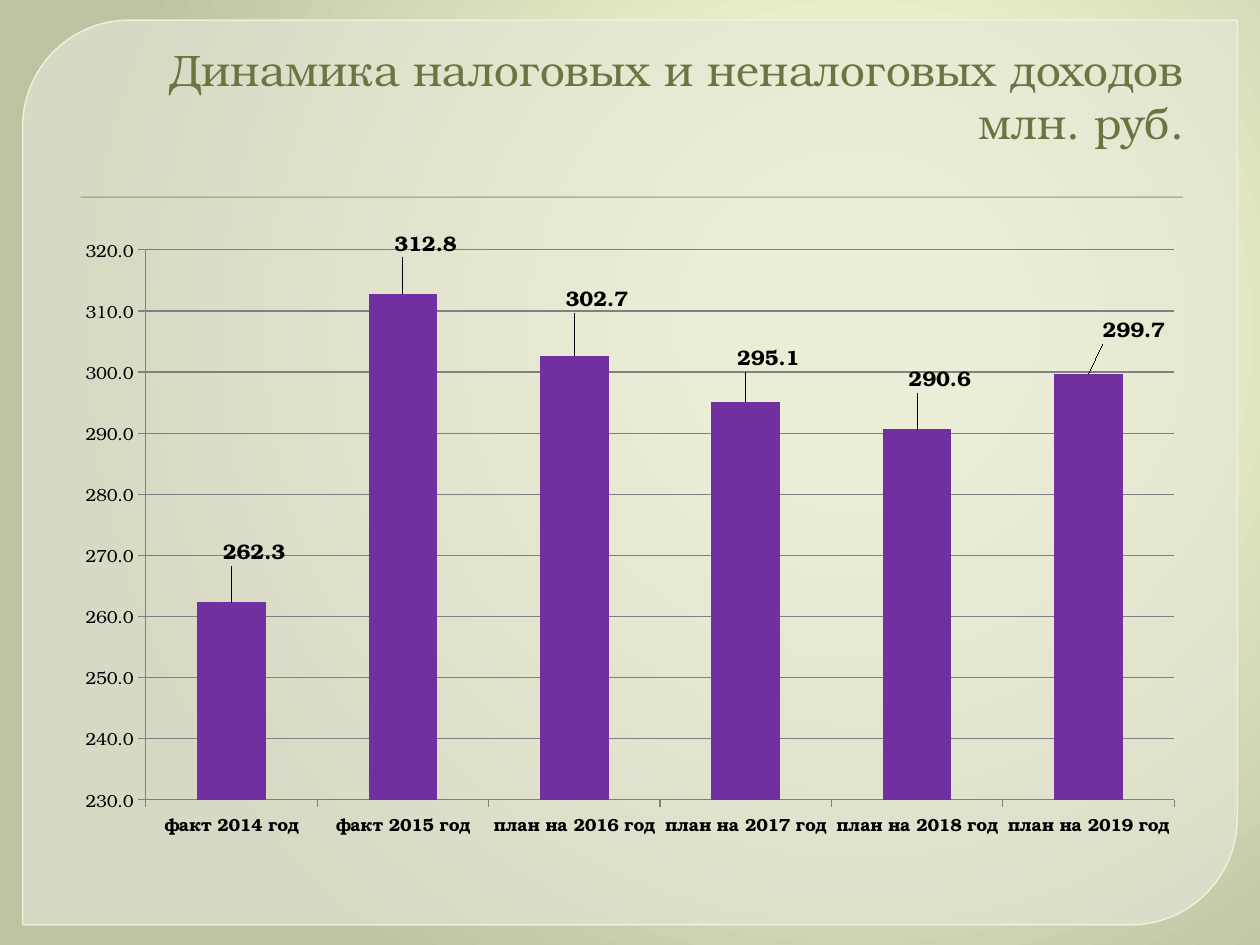
from lxml import etree
from pptx import Presentation
from pptx.chart.data import CategoryChartData
from pptx.dml.color import RGBColor
from pptx.enum.chart import XL_CHART_TYPE as ChartType, XL_LABEL_POSITION as LabelPosition, XL_TICK_MARK as Tick
from pptx.enum.shapes import MSO_SHAPE as Shape
from pptx.enum.text import MSO_ANCHOR as Anchor, MSO_AUTO_SIZE as AutoSize, PP_ALIGN as Align
from pptx.oxml import parse_xml
from pptx.oxml.ns import nsdecls, qn
from pptx.util import Inches, Pt

# Content
FONT = "TeX Gyre Bonum"
TITLE_LINES = ["Динамика налоговых и неналоговых доходов", "млн. руб."]
# Category, value, label shift as fractions of the chart's width and height
REVENUE = [
    ("факт 2014 год", 262.3, 0.02, -0.05),
    ("факт 2015 год", 312.8, 0.02, -0.05),
    ("план на 2016 год", 302.7, 0.02, -0.06),
    ("план на 2017 год", 295.1, 0.02, -0.04),
    ("план на 2018 год", 290.6, 0.02, -0.05),
    ("план на 2019 год", 299.7, 0.04, -0.04),
]
BACKGROUND_STOPS = [(0, "FBFED9"), (20, "F9FCD8"), (100, "BFC2A1")]
AXIS_GREY = "808080"


def rgb(value):
    return RGBColor.from_string(value)


def format_font(font, size, color="000000", bold=False):
    font.name, font.size, font.bold = FONT, Pt(size), bold
    font.color.rgb = rgb(color)


def write_text(frame, lines, size, color, align, anchor):
    frame.word_wrap = True
    frame.auto_size = AutoSize.NONE
    frame.vertical_anchor = anchor
    paragraph = frame.paragraphs[0]
    paragraph.alignment = align
    for index, line in enumerate(lines):
        if index:
            paragraph.add_line_break()
        run = paragraph.add_run()
        run.text = line
        format_font(run.font, size, color)
    return paragraph


def set_alpha(fill_parent, percent):
    color = fill_parent.find(qn("a:solidFill"))[0]
    etree.SubElement(color, qn("a:alpha")).set("val", str(percent * 1000))


def add_panel(slide, kind, left, top, width, height, color):
    shape = slide.shapes.add_shape(kind, Inches(left), Inches(top), Inches(width), Inches(height))
    shape.shadow.inherit = False
    shape.fill.solid()
    shape.fill.fore_color.rgb = rgb(color)
    shape.line.fill.background()
    return shape


def manual_layout(x, y, width=None, height=None):
    parts = [("x", x), ("y", y)]
    if width:
        parts = [("layoutTarget", "inner"), ("xMode", "edge"), ("yMode", "edge"),
                 *parts, ("w", width), ("h", height)]
    body = "".join(f'<c:{tag} val="{value}"/>' for tag, value in parts)
    return parse_xml(f'<c:layout {nsdecls("c")}><c:manualLayout>{body}</c:manualLayout></c:layout>')


presentation = Presentation()
presentation.slide_width, presentation.slide_height = Inches(10), Inches(7.5)
slide = presentation.slides.add_slide(presentation.slide_layouts[5])

# Radial background
slide.background.fill.gradient()
gradient = next(slide.element.iter(qn("a:gradFill")))
stops = "".join(f'<a:gs pos="{position * 1000}"><a:srgbClr val="{color}"/></a:gs>'
                for position, color in BACKGROUND_STOPS)
gradient.getparent().replace(gradient, parse_xml(
    f'<a:gradFill {nsdecls("a")} rotWithShape="1"><a:gsLst>{stops}</a:gsLst><a:path path="circle">'
    '<a:fillToRect l="68000" t="35000" r="32000" b="65000"/></a:path></a:gradFill>'))

# Translucent panel and rule under the title
panel = add_panel(slide, Shape.ROUND_2_DIAG_RECTANGLE, 0.18, 0.16, 9.64, 7.18, "E5E6D7")
panel.adjustments[0], panel.adjustments[1] = 0.118, 0
panel.line.color.rgb = rgb("F2F4E2")
panel.line.width = Pt(0.87)
panel_properties = panel.element.spPr
set_alpha(panel_properties, 65)
set_alpha(panel_properties.find(qn("a:ln")), 88)

rule = add_panel(slide, Shape.RECTANGLE, 0.64, 1.56, 8.75, 0.01, "72A376")
rule.element.spPr.find(qn("a:effectLst")).append(parse_xml(
    f'<a:outerShdw {nsdecls("a")} blurRad="12700" dist="12700" dir="5400000">'
    '<a:srgbClr val="000000"><a:alpha val="75000"/></a:srgbClr></a:outerShdw>'))

# Title, brought in front of the panel
title = slide.shapes.title
title.left, title.top, title.width, title.height = map(Inches, (0.5, 0.28, 9, 0.95))
heading = write_text(title.text_frame, TITLE_LINES, size=25.2, color="6D7442",
                     align=Align.RIGHT, anchor=Anchor.BOTTOM)
heading_properties = heading._p.get_or_add_pPr()
heading_properties.set("marL", str(Inches(0.06)))
heading_properties.set("indent", "0")
rule.element.addnext(title.element)

# Column chart
data = CategoryChartData(number_format="0.0")
data.categories = [row[0] for row in REVENUE]
data.add_series("Series 1", [row[1] for row in REVENUE])
chart = slide.shapes.add_chart(ChartType.COLUMN_CLUSTERED, Inches(0.5), Inches(1.8),
                               Inches(9), Inches(4.95), data).chart
chart.has_legend = chart.has_title = False
format_font(chart.font, 10)

plot = chart.plots[0]
plot.gap_width = 150
plot.vary_by_categories = False
plot_area = next(chart.element.iter(qn("c:plotArea")))
for old_layout in plot_area.findall(qn("c:layout")):
    plot_area.remove(old_layout)
plot_area.insert(0, manual_layout(0.073, 0.037, 0.907, 0.882))

# Axes
value_axis, category_axis = chart.value_axis, chart.category_axis
value_axis.minimum_scale, value_axis.maximum_scale, value_axis.major_unit = 230, 320, 10
value_axis.has_major_gridlines = True
value_axis.tick_labels.number_format = "0.0"
value_axis.tick_labels.number_format_is_linked = False
for axis in (value_axis, category_axis):
    axis.major_tick_mark = Tick.OUTSIDE
    format_font(axis.tick_labels.font, 10, bold=axis is category_axis)
for line in (value_axis.format.line, category_axis.format.line, value_axis.major_gridlines.format.line):
    line.color.rgb = rgb(AXIS_GREY)
    line.width = Pt(0.75)

# Bars and their shifted labels
series = plot.series[0]
series.invert_if_negative = False
series.format.fill.solid()
series.format.fill.fore_color.rgb = rgb("7030A0")
labels = series.data_labels
labels.show_value = True
labels.number_format, labels.number_format_is_linked = "0.0", False
format_font(labels.font, 12, bold=True)
for index in range(len(REVENUE)):
    label = series.points[index].data_label
    label.position = LabelPosition.OUTSIDE_END
    format_font(label.font, 12, bold=True)
for row, label_element in zip(REVENUE, chart.element.iter(qn("c:dLbl"))):
    label_element.find(qn("c:idx")).addnext(manual_layout(*row[2:]))

presentation.save("out.pptx")
